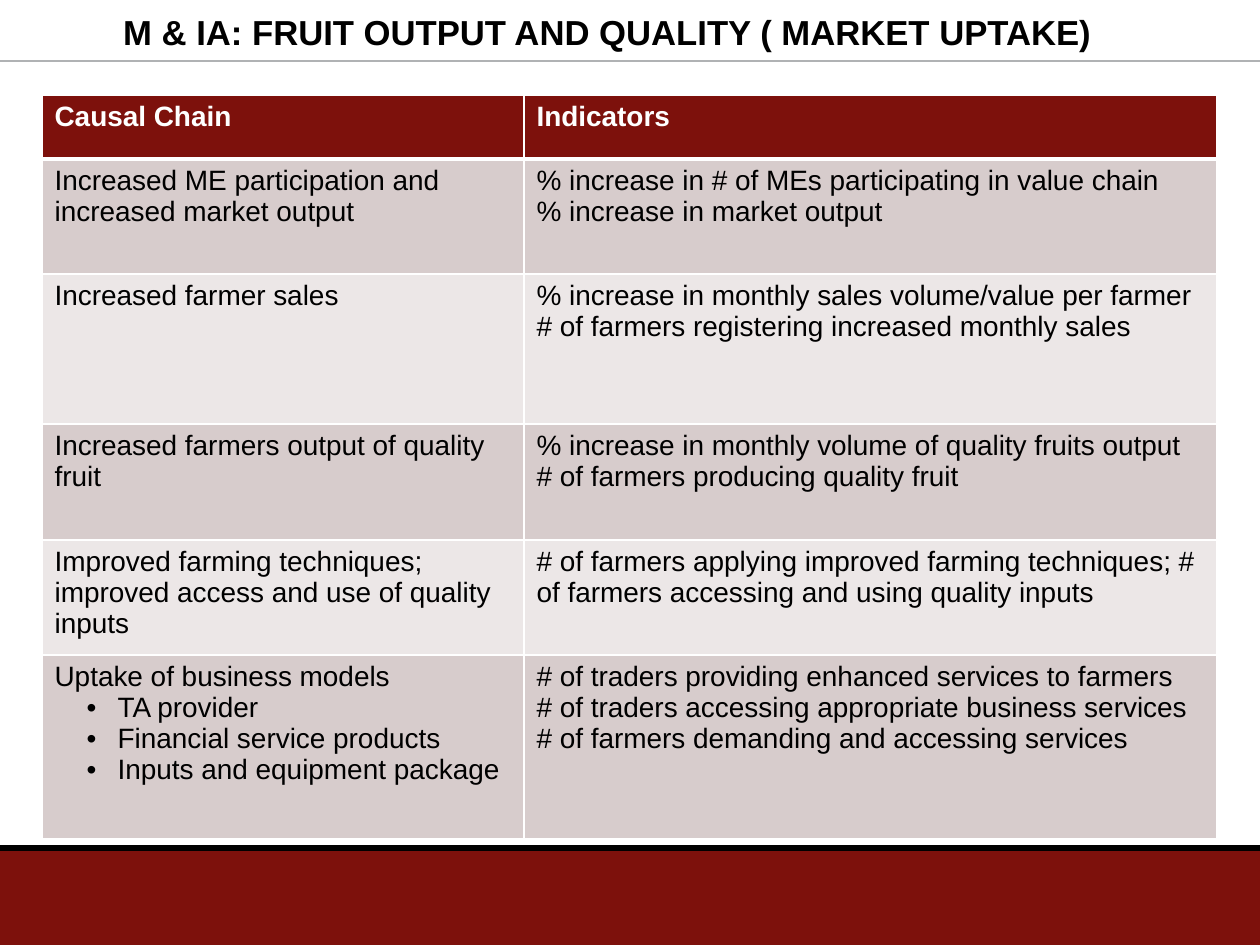
from lxml.etree import SubElement
from pptx import Presentation
from pptx.dml.color import RGBColor
from pptx.enum.shapes import MSO_CONNECTOR, MSO_SHAPE
from pptx.enum.text import MSO_ANCHOR, MSO_AUTO_SIZE, PP_ALIGN
from pptx.oxml.ns import qn
from pptx.util import Pt

PX = 914400 // 126
WIDE, HIGH = 1260, 945
FONT = "Arial"

MAROON = RGBColor(0x7D, 0x11, 0x0C)
GREY = RGBColor(0xB0, 0xB2, 0xB4)
BLACK = RGBColor(0, 0, 0)
WHITE = RGBColor(0xFF, 0xFF, 0xFF)
ROSE = RGBColor(0xD7, 0xCC, 0xCC)
PALE = RGBColor(0xEC, 0xE7, 0xE7)

COLS = [482, 693]
ROWS = [64, 115, 150, 116, 115, 184]
BULLET = "•"
CHAIN = [
    (["Causal Chain"], ["Indicators"]),
    (["Increased ME participation and increased market output"],
     ["% increase in # of MEs participating in value chain",
      "% increase in market output"]),
    (["Increased farmer sales"],
     ["% increase in monthly sales volume/value per farmer",
      "# of farmers registering increased monthly sales"]),
    (["Increased farmers output of quality fruit"],
     ["% increase in monthly volume of quality fruits output",
      "# of farmers producing quality fruit"]),
    (["Improved farming techniques; improved access and use of quality inputs"],
     ["# of farmers applying improved farming techniques; "
      "# of farmers accessing and using quality inputs"]),
    (["Uptake of business models", BULLET + "TA provider",
      BULLET + "Financial service products",
      BULLET + "Inputs and equipment package"],
     ["# of traders providing enhanced services to farmers",
      "# of traders accessing appropriate business services",
      "# of farmers demanding and accessing services"]),
]


def px(*nums):
    return [n * PX for n in nums]


def add_run(para, text, size, color, bold):
    run = para.add_run()
    run.text = text
    font = run.font
    font.name, font.size, font.bold = FONT, Pt(size), bold
    font.color.rgb = color


def add_rule(slide, x, y, wide, color, weight):
    rule = slide.shapes.add_connector(
        MSO_CONNECTOR.STRAIGHT, *px(x, y, x + wide, y))
    rule.line.color.rgb = color
    rule.line.width = Pt(weight)
    SubElement(rule._element.spPr, qn("a:effectLst"))


def add_footer(slide, x, y, wide, high):
    band = slide.shapes.add_shape(MSO_SHAPE.RECTANGLE, *px(x, y, wide, high))
    band.shadow.inherit = False
    band.fill.solid()
    band.fill.fore_color.rgb = MAROON
    band.line.fill.background()
    add_rule(slide, x, y - 2, wide, BLACK, 3.75)


def add_title(slide, x, y, wide, high):
    title = slide.shapes.title
    title.left, title.top, title.width, title.height = px(x, y, wide, high)
    frame = title.text_frame
    frame.word_wrap = True
    frame.auto_size = MSO_AUTO_SIZE.NONE
    frame.vertical_anchor = MSO_ANCHOR.MIDDLE
    para = frame.paragraphs[0]
    para.alignment = PP_ALIGN.CENTER
    add_run(para, "M & IA: FRUIT OUTPUT AND QUALITY ( MARKET UPTAKE)",
            19.8, BLACK, True)


def set_edges(cell, head):
    """Draw white cell borders, thicker on either side of the header's foot."""
    props = cell._tc.get_or_add_tcPr()
    heavy = {"lnB"} if head == 0 else {"lnT"} if head == 1 else set()
    for spot, tag in enumerate(("lnL", "lnR", "lnT", "lnB")):
        weight = Pt(3 if tag in heavy else 1)
        edge = props.makeelement(qn("a:" + tag), {"w": str(weight)})
        fill = SubElement(edge, qn("a:solidFill"))
        SubElement(fill, qn("a:srgbClr"), val=str(WHITE))
        props.insert(spot, edge)


def set_bullet(para):
    para.level = 1
    props = para._p.get_or_add_pPr()
    props.set("marL", str(63 * PX))
    props.set("indent", str(-31 * PX))
    SubElement(props, qn("a:buFont"), typeface=FONT)
    SubElement(props, qn("a:buChar"), char=BULLET)


def fill_cell(cell, lines, row):
    head = row == 0
    cell.fill.solid()
    cell.fill.fore_color.rgb = MAROON if head else ROSE if row % 2 else PALE
    set_edges(cell, row)
    frame = cell.text_frame
    for i, line in enumerate(lines):
        para = frame.add_paragraph() if i else frame.paragraphs[0]
        if line.startswith(BULLET):
            set_bullet(para)
        add_run(para, line.lstrip(BULLET), 16, WHITE if head else BLACK, head)


def add_grid(slide, x, y):
    table = slide.shapes.add_table(
        len(ROWS), len(COLS), *px(x, y, sum(COLS), sum(ROWS))).table
    for col, wide in zip(table.columns, COLS):
        col.width = wide * PX
    for r, (high, cells) in enumerate(zip(ROWS, CHAIN)):
        table.rows[r].height = high * PX
        for c, lines in enumerate(cells):
            fill_cell(table.cell(r, c), lines, r)


def main():
    deck = Presentation()
    deck.slide_width, deck.slide_height = px(WIDE, HIGH)
    slide = deck.slides.add_slide(deck.slide_layouts[5])
    add_footer(slide, 0, 850, WIDE, 95)
    add_rule(slide, 0, 61, WIDE, GREY, 0.75)
    add_grid(slide, 42, 95)
    add_title(slide, 73, 0, 1068, 63)
    deck.save("out.pptx")


if __name__ == "__main__":
    main()
